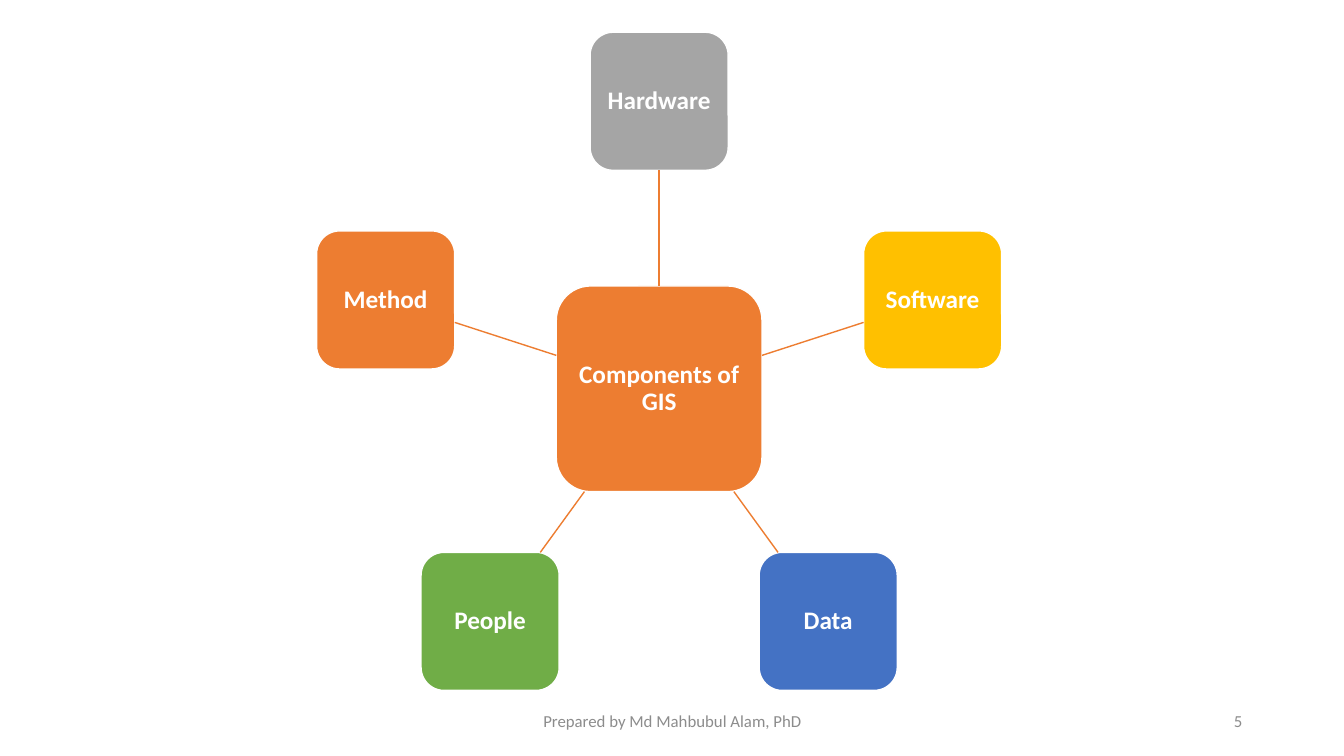
from math import cos, radians, sin

from lxml import etree
from pptx import Presentation
from pptx.dml.color import RGBColor
from pptx.enum.shapes import MSO_CONNECTOR, MSO_SHAPE
from pptx.enum.text import MSO_ANCHOR, PP_ALIGN
from pptx.oxml.ns import qn
from pptx.util import Inches, Pt

ROUND = MSO_SHAPE.ROUNDED_RECTANGLE
STRAIGHT = MSO_CONNECTOR.STRAIGHT
MIDDLE = MSO_ANCHOR.MIDDLE
CENTER, RIGHT = PP_ALIGN.CENTER, PP_ALIGN.RIGHT

FONT = "Calibri"
WHITE, ORANGE, GRAY = "FFFFFF", "ED7D31", "8C8C8C"
HUB, NODE = 2.04, 1.37  # side lengths in inches
PARTS = [
    ("Hardware", "A5A5A5"),
    ("Software", "FFC000"),
    ("Data", "4472C4"),
    ("People", "70AD47"),
    ("Method", ORANGE),
]


def color(code):
    return RGBColor.from_string(code)


def write(shape, text, size, code, align, bold=False):
    frame = shape.text_frame
    frame.word_wrap = True
    frame.vertical_anchor = MIDDLE
    frame.text = text
    para = frame.paragraphs[0]
    para.alignment = align
    font = para.runs[0].font
    font.name, font.size, font.bold = FONT, Pt(size), bold
    font.color.rgb = color(code)


def tile(slide, x, y, side, text, fill):
    """Rounded square centred on x, y."""
    shape = slide.shapes.add_shape(
        ROUND, Inches(x - side / 2), Inches(y - side / 2), Inches(side), Inches(side))
    shape.shadow.inherit = False
    shape.fill.solid()
    shape.fill.fore_color.rgb = color(fill)
    shape.line.color.rgb = color(WHITE)
    shape.line.width = Pt(1)
    write(shape, text, 18, WHITE, CENTER, True)
    frame = shape.text_frame
    frame.margin_left = frame.margin_right = Inches(0.05)
    frame.margin_top = frame.margin_bottom = Inches(0.05)
    frame.paragraphs[0].line_spacing = 0.9
    return shape


def spoke(slide, start, end):
    line = slide.shapes.add_connector(STRAIGHT, *(Inches(v) for v in start + end))
    line.line.color.rgb = color(ORANGE)
    line.line.width = Pt(1)
    etree.SubElement(line._element.spPr, qn("a:effectLst"))
    return line


def wheel(slide, left, top, height):
    """Hub with the parts spread evenly around it, the first one on top."""
    step = radians(360 / len(PARTS))
    # The lowest parts sit half a step away from straight down
    reach = (height - NODE) / (1 + cos(step / 2))
    x = left + NODE / 2 + reach * sin(step)
    y = top + NODE / 2 + reach
    hub = tile(slide, x, y, HUB, "Components of GIS", ORANGE)
    for i, (name, fill) in enumerate(PARTS):
        dx, dy = sin(i * step), -cos(i * step)
        node = tile(slide, x + reach * dx, y + reach * dy, NODE, name, fill)
        # Distances along the ray to the two square edges
        edge = max(abs(dx), abs(dy))
        near, far = HUB / 2 / edge, reach - NODE / 2 / edge
        line = spoke(slide, (x + near * dx, y + near * dy), (x + far * dx, y + far * dy))
        if i == 0:
            line.begin_connect(hub, 0)
            line.end_connect(node, 2)


def footer(slide, top, height):
    for left, width, text, align in [
        (4.42, 4.5, "Prepared by Md Mahbubul Alam, PhD", CENTER),
        (9.42, 3, "5", RIGHT),
    ]:
        box = slide.shapes.add_textbox(
            Inches(left), Inches(top), Inches(width), Inches(height))
        write(box, text, 12, GRAY, align)


def main():
    deck = Presentation()
    deck.slide_width, deck.slide_height = Inches(13.33), Inches(7.5)
    slide = deck.slides.add_slide(deck.slide_layouts[6])
    wheel(slide, 3.14, 0.32, 6.53)
    footer(slide, 6.95, 0.4)
    deck.save("out.pptx")


if __name__ == "__main__":
    main()
